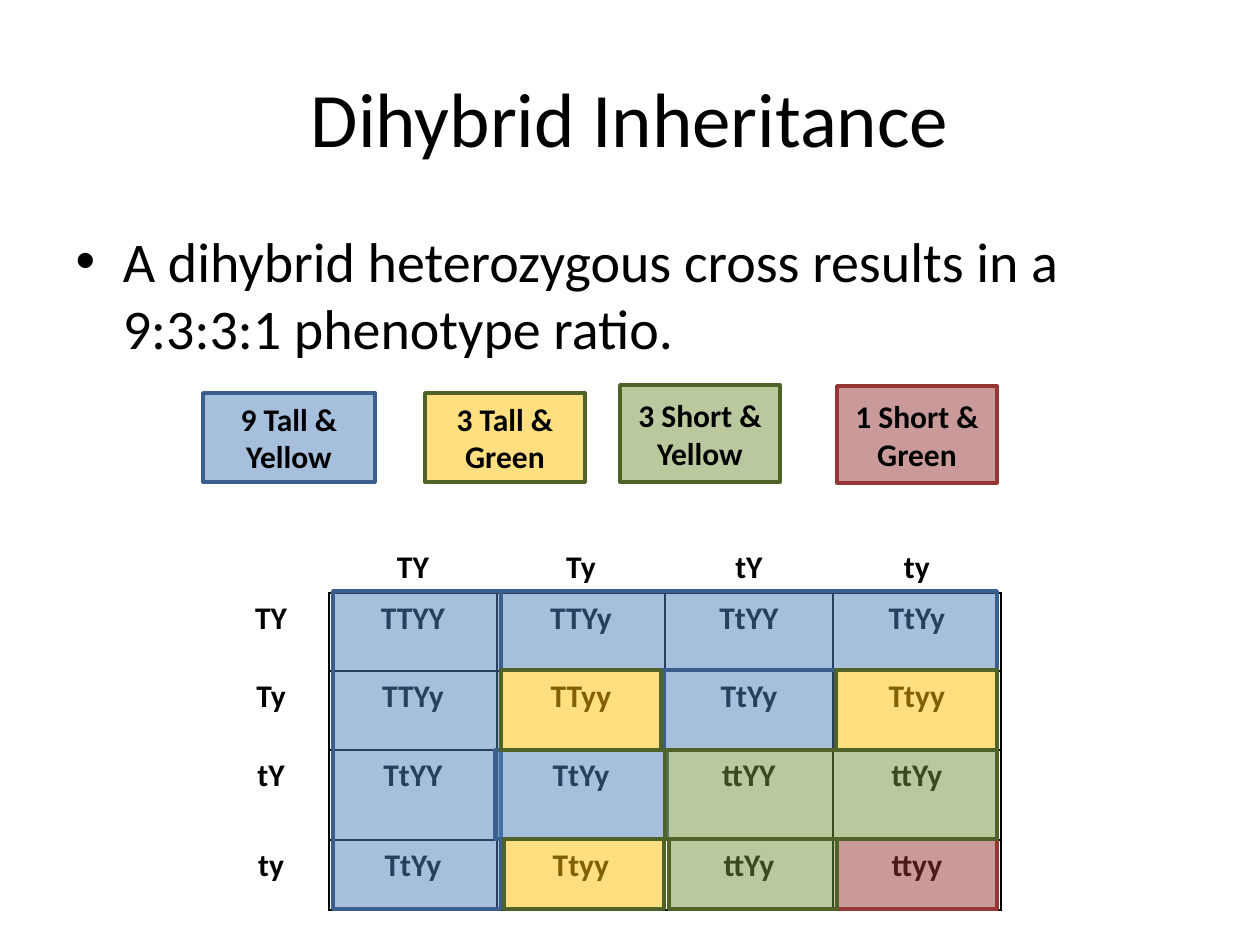
import pptx
import pptx.util
import pptx.dml.color
import pptx.enum.shapes
import pptx.enum.text
import pptx.oxml
import pptx.oxml.ns
from dataclasses import dataclass

PX = 914400 / 126
MID = pptx.enum.text.MSO_ANCHOR.MIDDLE
CENTER = pptx.enum.text.PP_ALIGN.CENTER
RECT = pptx.enum.shapes.MSO_SHAPE.RECTANGLE


@dataclass(frozen=True)
class Theme:
    font: str = "Calibri"
    ink: str = "000000"
    paper: str = "FFFFFF"
    blue: tuple = ("4F81BD", "3A5F8C")
    gold: tuple = ("FFC000", "4F6228")
    green: tuple = ("77933C", "4F6228")
    red: tuple = ("953735", "953735")
    title: int = 44
    body: int = 32
    label: int = 18
    edge: int = 2
    alpha: int = 50


def emu(*sizes):
    return [pptx.util.Emu(round(size * PX)) for size in sizes]


def rgb(code):
    return pptx.dml.color.RGBColor.from_string(code)


class Deck:
    def __init__(self, theme):
        self.theme = theme
        self.file = pptx.Presentation()
        self.file.slide_width, self.file.slide_height = emu(1260, 945)
        self.slide = self.file.slides.add_slide(self.file.slide_layouts[1])

    def place(self, shape, area):
        shape.left, shape.top, shape.width, shape.height = emu(*area)

    def label(self, frame, text, size, bold=False, align=None):
        para = frame.paragraphs[0]
        if align is not None:
            para.alignment = align
        run = para.add_run()
        run.text = text
        font = run.font
        font.name = self.theme.font
        font.size = pptx.util.Pt(size)
        font.bold = bold
        font.color.rgb = rgb(self.theme.ink)

    def title(self, text, area):
        shape = self.slide.shapes.title
        self.place(shape, area)
        shape.text_frame.vertical_anchor = MID
        self.label(shape.text_frame, text, self.theme.title, align=CENTER)

    def body(self, text, area):
        shape = self.slide.placeholders[1]
        self.place(shape, area)
        self.label(shape.text_frame, text, self.theme.body)

    def border(self, cell, sides):
        props = cell._tc.get_or_add_tcPr()
        for side in "LRTB":
            color, width = sides[side]
            props.append(pptx.oxml.parse_xml(
                f'<a:ln{side} {pptx.oxml.ns.nsdecls("a")} w="{pptx.util.Pt(width)}">'
                f'<a:solidFill><a:srgbClr val="{color}"/></a:solidFill></a:ln{side}>'))

    def table(self, rows, area, widths, heights):
        frame = self.slide.shapes.add_table(len(rows), len(widths), *emu(*area))
        grid = frame.table
        grid.first_row = grid.horz_banding = False
        for col, width in zip(grid.columns, emu(*widths)):
            col.width = width
        for row, height in zip(grid.rows, emu(*heights)):
            row.height = height
        dark, light = (self.theme.ink, 1), (self.theme.paper, 1)
        for i, row in enumerate(rows):
            for j, text in enumerate(row):
                cell = grid.cell(i, j)
                sides = dict.fromkeys("LRTB", dark if i and j else light)
                if i and not j:
                    sides["R"] = dark
                if j and not i:
                    sides["B"] = dark
                if not i and not j:
                    sides["B"] = (self.theme.paper, 3)
                self.border(cell, sides)
                cell.fill.background()
                if text:
                    self.label(cell.text_frame, text, self.theme.label, True, CENTER)

    def box(self, area, tint, text=""):
        shape = self.slide.shapes.add_shape(RECT, *emu(*area))
        shape.shadow.inherit = False
        fill, line = tint
        shape.fill.solid()
        shape.fill.fore_color.rgb = rgb(fill)
        color = shape._element.spPr.find(".//" + pptx.oxml.ns.qn("a:srgbClr"))
        alpha = color.makeelement(pptx.oxml.ns.qn("a:alpha"), {"val": str(self.theme.alpha * 1000)})
        color.append(alpha)
        shape.line.color.rgb = rgb(line)
        shape.line.width = pptx.util.Pt(self.theme.edge)
        if text:
            shape.text_frame.word_wrap = True
            shape.text_frame.vertical_anchor = MID
            self.label(shape.text_frame, text, self.theme.label, True, CENTER)


def cross(left, top):
    return "".join("".join(sorted(a + b)) for a, b in zip(left, top))


def main():
    theme = Theme()
    deck = Deck(theme)
    deck.title("Dihybrid Inheritance", (63, 38, 1134, 158))
    deck.body("A dihybrid heterozygous cross results in a 9:3:3:1 phenotype ratio.",
              (63, 220, 1134, 624))

    genes = ["TY", "Ty", "tY", "ty"]
    rows = [[""] + genes] + [[left] + [cross(left, top) for top in genes] for left in genes]
    deck.table(rows, (213, 542, 788, 366), [116] + [168] * 4, [49, 78, 79, 90, 70])

    boxes = [
        ((333, 591, 168, 318), theme.blue, ""),
        ((501, 591, 496, 79), theme.blue, ""),
        ((495, 750, 172, 89), theme.blue, ""),
        ((664, 670, 172, 80), theme.blue, ""),
        ((203, 393, 172, 89), theme.blue, "9 Tall & Yellow"),
        ((837, 839, 160, 70), theme.red, ""),
        ((837, 386, 160, 97), theme.red, "1 Short & Green"),
        ((501, 670, 160, 80), theme.gold, ""),
        ((504, 839, 160, 70), theme.gold, ""),
        ((425, 393, 160, 89), theme.gold, "3 Tall & Green"),
        ((836, 670, 161, 80), theme.gold, ""),
        ((665, 750, 332, 89), theme.green, ""),
        ((669, 839, 168, 70), theme.green, ""),
        ((620, 385, 160, 97), theme.green, "3 Short & Yellow"),
    ]
    for area, tint, text in boxes:
        deck.box(area, tint, text)
    deck.file.save("out.pptx")


if __name__ == "__main__":
    main()
